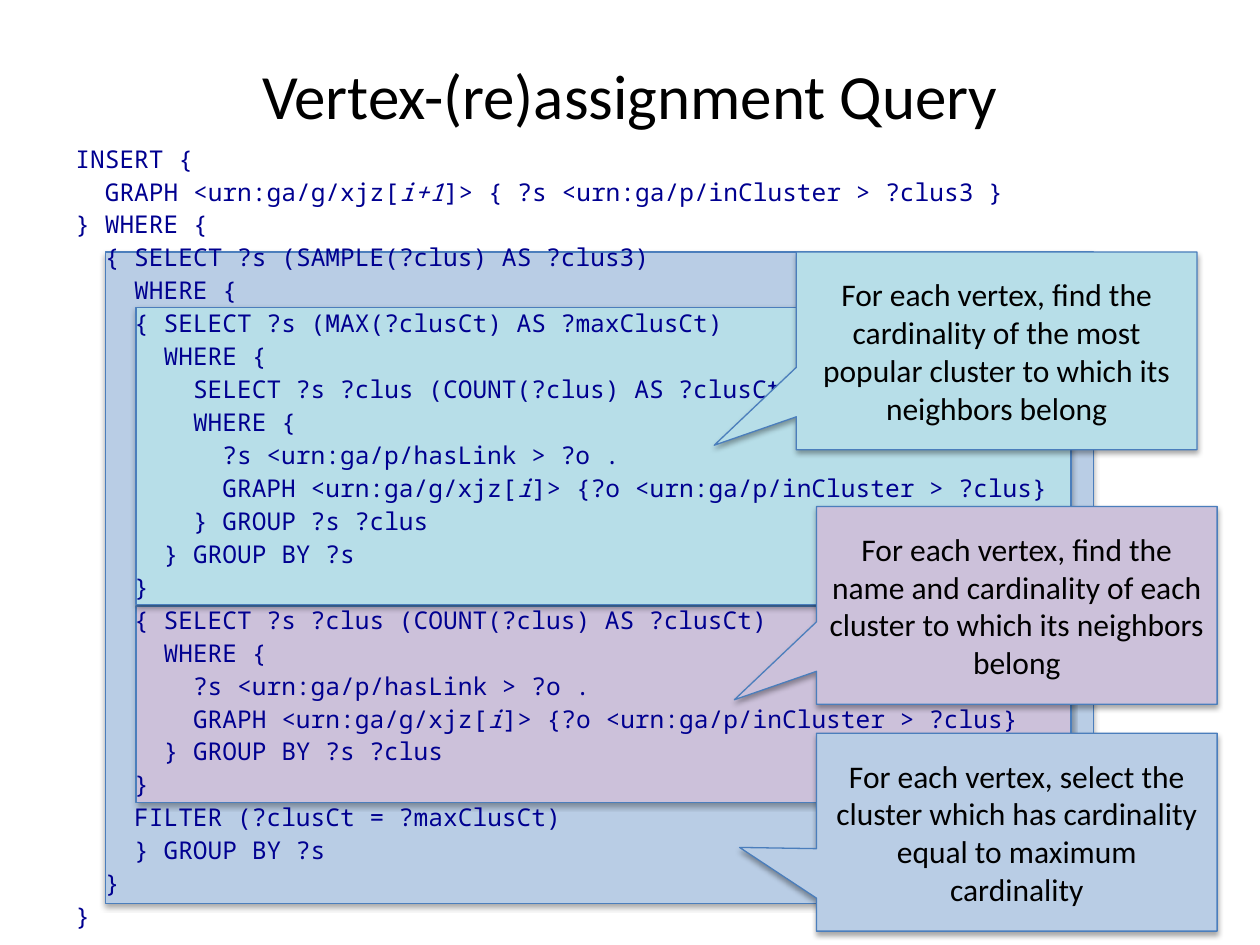
from lxml.etree import SubElement
from pptx import Presentation
from pptx.dml.color import RGBColor
from pptx.enum.shapes import MSO_SHAPE
from pptx.enum.text import MSO_ANCHOR, PP_ALIGN
from pptx.oxml.ns import qn
from pptx.util import Inches, Pt

COLORS = {
    "outer": "B9CDE5", "names": "CCC1DA", "maximum": "B7DEE8",
    "border": "4B7EBC", "code": "000090", "text": "000000",
}
TITLE = "Vertex-(re)assignment Query"
QUERY = [
    (0, "INSERT {"),
    (1, "GRAPH <urn:ga/g/xjz[|i+1|]> { ?s <urn:ga/p/inCluster > ?clus3 }"),
    (0, "} WHERE {"),
    (1, "{ SELECT ?s (SAMPLE(?clus) AS ?clus3)"),
    (2, "WHERE {"),
    (2, "{ SELECT ?s (MAX(?clusCt) AS ?maxClusCt)"),
    (3, "WHERE {"),
    (4, "SELECT ?s ?clus (COUNT(?clus) AS ?clusCt)"),
    (4, "WHERE {"),
    (5, "?s <urn:ga/p/hasLink > ?o ."),
    (5, "GRAPH <urn:ga/g/xjz[|i|]> {?o <urn:ga/p/inCluster > ?clus}"),
    (4, "} GROUP ?s ?clus"),
    (3, "} GROUP BY ?s"),
    (2, "}"),
    (2, "{ SELECT ?s ?clus (COUNT(?clus) AS ?clusCt)"),
    (3, "WHERE {"),
    (4, "?s <urn:ga/p/hasLink > ?o ."),
    (4, "GRAPH <urn:ga/g/xjz[|i|]> {?o <urn:ga/p/inCluster > ?clus}"),
    (3, "} GROUP BY ?s ?clus"),
    (2, "}"),
    (2, "FILTER (?clusCt = ?maxClusCt)"),
    (2, "} GROUP BY ?s"),
    (1, "}"),
    (0, "}"),
]
CALLOUTS = [
    ("maximum", 6.32, 2, (-0.705, 0.477),
     "For each vertex, find the cardinality of the most popular cluster "
     "to which its neighbors belong"),
    ("names", 6.48, 4.02, (-0.705, 0.477),
     "For each vertex, find the name and cardinality of each cluster "
     "to which its neighbors belong"),
    ("outer", 6.48, 5.82, (-0.692, 0.077),
     "For each vertex, select the cluster which has cardinality "
     "equal to maximum cardinality"),
]
CALLOUT_SIZE = (3.18, 1.57)

ROW = 0.26
INDENT = 16.8
MAXIMUM_ROWS, NAMES_ROWS = 9, 6
INNER_LEFT, INNER_TOP, INNER_WIDTH = 1.08, 2.44, 7.42
MAXIMUM_HEIGHT = MAXIMUM_ROWS * ROW + 0.02
PANELS = [
    ("outer", 0.84, 2, 7.84, 5.17),
    ("names", INNER_LEFT, INNER_TOP + MAXIMUM_HEIGHT + 0.01, INNER_WIDTH, NAMES_ROWS * ROW),
    ("maximum", INNER_LEFT, INNER_TOP, INNER_WIDTH, MAXIMUM_HEIGHT),
]

prs = Presentation()
prs.slide_width, prs.slide_height = Inches(10), Inches(7.5)
slide = prs.slides.add_slide(prs.slide_layouts[6])


def style(font, name, size, color):
    font.name, font.size = name, Pt(size)
    font.color.rgb = RGBColor.from_string(COLORS[color])


def add_shadow(shape):
    shape.shadow.inherit = False
    effects = shape._element.spPr.find(qn("a:effectLst"))
    shadow = SubElement(effects, qn("a:outerShdw"), blurRad=str(Pt(3.1)),
                        dist=str(Pt(1.8)), dir="5400000", rotWithShape="0")
    black = SubElement(shadow, qn("a:srgbClr"), val=COLORS["text"])
    SubElement(black, qn("a:alpha"), val="35000")


def add_block(kind, color, *box):
    shape = slide.shapes.add_shape(kind, *map(Inches, box))
    shape.fill.solid()
    shape.fill.fore_color.rgb = RGBColor.from_string(COLORS[color])
    shape.line.color.rgb = RGBColor.from_string(COLORS["border"])
    shape.line.width = Pt(0.75)
    add_shadow(shape)
    return shape


def add_frame(*box):
    frame = slide.shapes.add_textbox(*map(Inches, box)).text_frame
    frame.word_wrap = True
    return frame


def fill_centred(frame, text, size):
    frame.text = text
    frame.word_wrap = True
    frame.vertical_anchor = MSO_ANCHOR.MIDDLE
    frame.paragraphs[0].alignment = PP_ALIGN.CENTER
    style(frame.paragraphs[0].runs[0].font, "Calibri", size, "text")


for color, *box in PANELS:
    add_block(MSO_SHAPE.RECTANGLE, color, *box)

fill_centred(add_frame(0.5, 0.3, 9, 0.89), TITLE, 36)

query_frame = add_frame(0.5, 1.09, 8.19, 6.08)
for number, (level, line) in enumerate(QUERY):
    paragraph = query_frame.add_paragraph() if number else query_frame.paragraphs[0]
    paragraph.space_before = Pt(2)
    paragraph.line_spacing = Pt(16.83)
    paragraph._p.get_or_add_pPr().set("marL", str(Pt(level * INDENT)))
    for position, part in enumerate(line.split("|")):
        run = paragraph.add_run()
        run.text = part
        style(run.font, "Noto Sans Mono", 14, "code")
        run.font.italic = position % 2 == 1

for color, left, top, tip, text in CALLOUTS:
    callout = add_block(MSO_SHAPE.RECTANGULAR_CALLOUT, color, left, top, *CALLOUT_SIZE)
    callout.adjustments[0], callout.adjustments[1] = tip
    fill_centred(callout.text_frame, text, 18)

prs.save("out.pptx")
